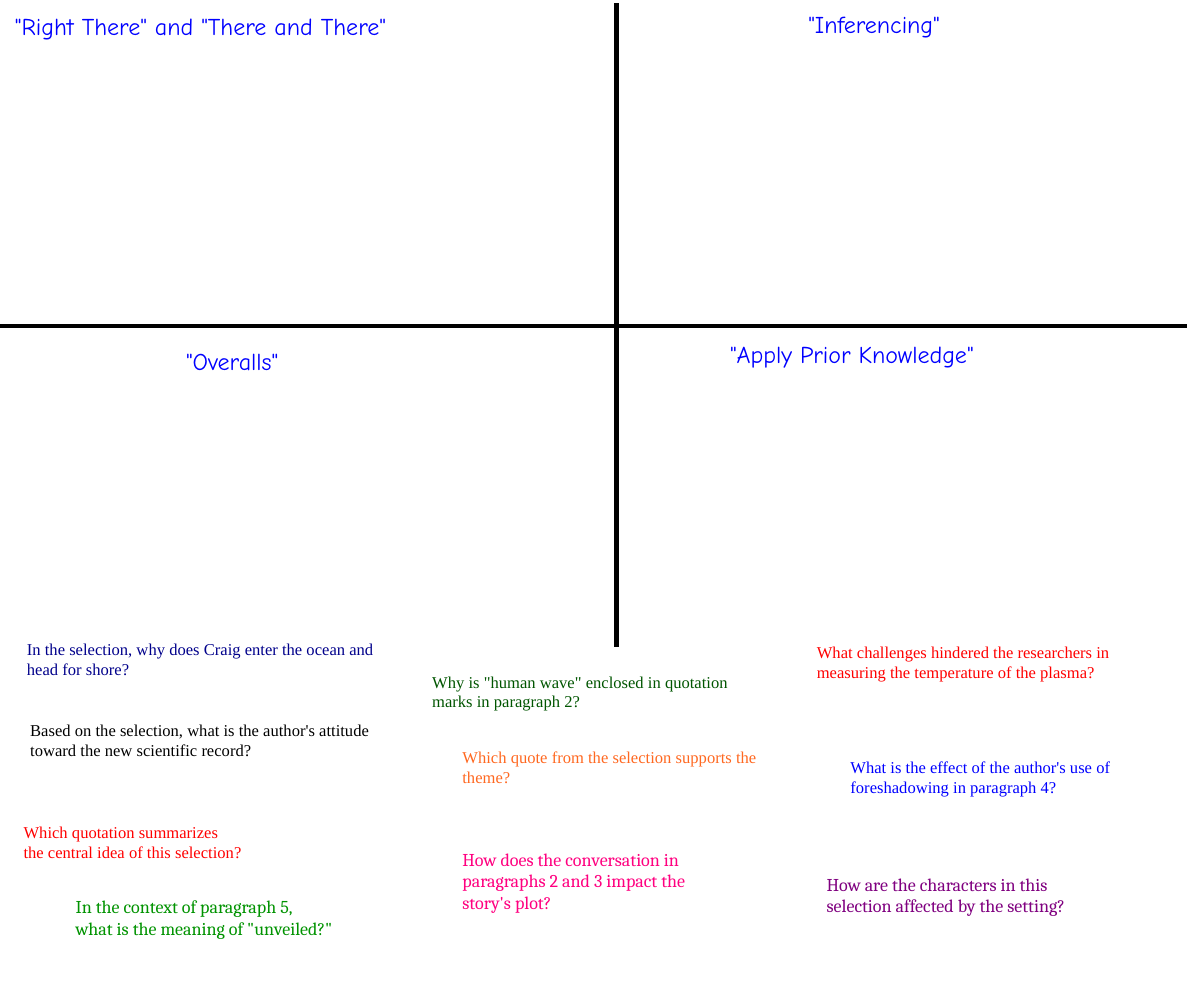
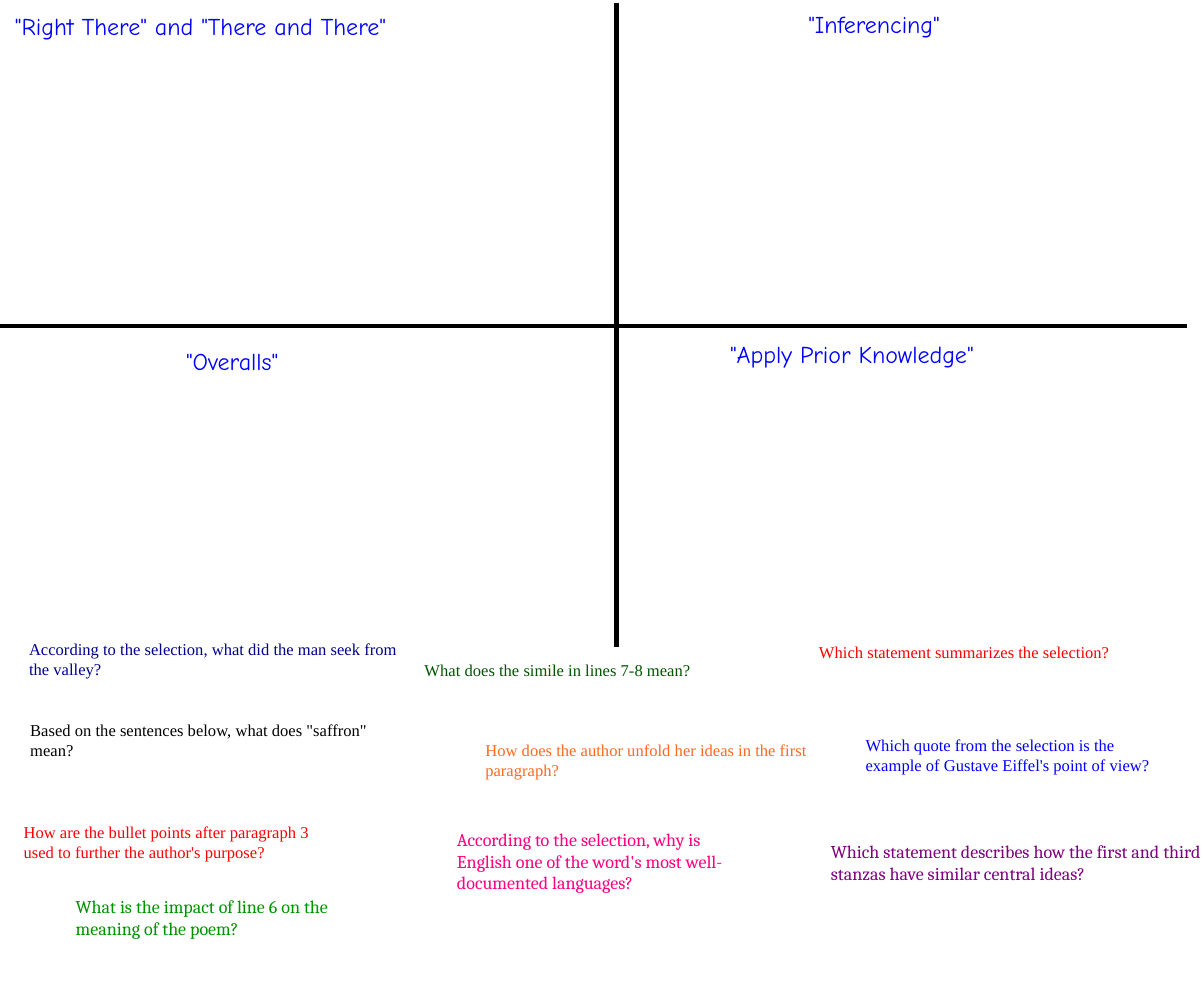
import pptx
import pptx.util
import pptx.dml.color
import pptx.enum.shapes
import pptx.enum.text
import pptx.oxml.ns
import lxml.etree

Pt = pptx.util.Pt

INK = {
    "black": "000000", "blue": "0000FF", "red": "FF0000", "green": "009300",
    "purple": "800080", "pink": "FF0080", "forest": "005500",
    "orange": "FF6820", "navy": "00008B",
}

HEAD = ("Comic Neue", 16, 19.4)
TIMES = ("Times New Roman", 11, 13.3)
CAMBRIA = ("Cambria", 12, 14.6)

LINES = [(0, 216.7, 789, 216.7), (409.7, 2.2, 409.7, 429.8)]

HEADS = [
    ('"Right There" and "There and There"', 2.9, 4.3, 412),
    ('"Inferencing"', 530, 2.9, 172),
    ('"Overalls"', 116.6, 226.8, 136),
    ('"Apply Prior Knowledge"', 478, 221.8, 280),
]

STYLES = [
    (TIMES, "red"), (CAMBRIA, "green"), (CAMBRIA, "purple"),
    (CAMBRIA, "pink"), (TIMES, "black"), (TIMES, "blue"),
    (TIMES, "red"), (TIMES, "forest"), (TIMES, "orange"), (TIMES, "navy"),
]

SLIDES = [
    [
        ("Which quotation summarizes\nthe central idea of this selection?",
         8.6, 542.9, 220, 2),
        ('In the context of paragraph 5,\nwhat is the meaning of "unveiled?"',
         43.2, 591.8, 230, 2),
        ("How are the characters in this\nselection affected by the setting?",
         542.2, 576.7, 220, 2),
        ("How does the conversation in\nparagraphs 2 and 3 impact the\n"
         "story's plot?", 300.2, 560.2, 212, 3),
        ("Based on the selection, what is the author's attitude toward "
         "the new scientific record?", 13, 475.2, 244, 2),
        ("What is the effect of the author's use of foreshadowing "
         "in paragraph 4?", 558, 499.7, 216, 2),
        ("What challenges hindered the researchers in measuring "
         "the temperature of the plasma?", 535.7, 423.4, 216, 3),
        ('Why is "human wave" enclosed in quotation marks in paragraph 2?',
         280.1, 442.8, 236, 2),
        ("Which quote from the selection supports the theme?",
         300.2, 493.2, 236, 2),
        ("In the selection, why does Craig enter the ocean "
         "and head for shore?", 10.8, 421.2, 264, 2),
    ],
    [
        ("How are the bullet points after paragraph 3\n"
         "used to further the author's purpose?", 8.6, 542.9, 288, 2),
        ("What is the impact of line 6 on the\nmeaning of the poem?",
         43.2, 591.8, 234, 2),
        ("Which statement describes how the first and third stanzas "
         "have similar central ideas?", 545, 555.1, 262, 2),
        ("According to the selection, why is\n"
         "English one of the word's most well-\ndocumented languages?",
         296.6, 547.2, 244, 3),
        ('Based on the sentences below, what does "saffron" mean?',
         13, 475.2, 244, 2),
        ("Which quote from the selection is the example of "
         "Gustave Eiffel's point of view?", 568.1, 485.3, 216, 3),
        ("Which statement summarizes the selection?",
         537.1, 423.4, 216, 2),
        ("What does the simile in lines 7-8 mean?", 275, 434.9, 236, 1),
        ("How does the author unfold her ideas in the first paragraph?",
         315.4, 488.2, 236, 2),
        ("According to the selection, what did the man seek "
         "from the valley?", 12.2, 421.2, 262, 2),
    ],
]


def rgb(ink):
    return pptx.dml.color.RGBColor.from_string(INK[ink])


def add_line(slide, ends):
    line = slide.shapes.add_connector(
        pptx.enum.shapes.MSO_CONNECTOR.STRAIGHT, *map(Pt, ends))
    line.line.width = Pt(3)
    line.line.color.rgb = rgb("black")
    lxml.etree.SubElement(
        line._element.spPr, pptx.oxml.ns.qn("a:effectLst"))


def add_text(slide, style, ink, text, left, top, width, rows=1):
    font, size, pitch = style
    height = rows * pitch + 7.2
    box = slide.shapes.add_textbox(*map(Pt, (left, top, width, height)))
    frame = box.text_frame
    frame.word_wrap = True
    frame.auto_size = pptx.enum.text.MSO_AUTO_SIZE.SHAPE_TO_FIT_TEXT
    frame.text = text
    for para in frame.paragraphs:
        para.font.name = font
        para.font.size = Pt(size)
        para.font.color.rgb = rgb(ink)


def add_grid(slide):
    for ends in LINES:
        add_line(slide, ends)
    for head in HEADS:
        add_text(slide, HEAD, "blue", *head)


def main():
    deck = pptx.Presentation()
    deck.slide_width, deck.slide_height = Pt(800), Pt(664)
    for cards in SLIDES:
        slide = deck.slides.add_slide(deck.slide_layouts[6])
        add_grid(slide)
        for (style, ink), card in zip(STYLES, cards):
            add_text(slide, style, ink, *card)
    deck.save("out.pptx")


if __name__ == "__main__":
    main()
